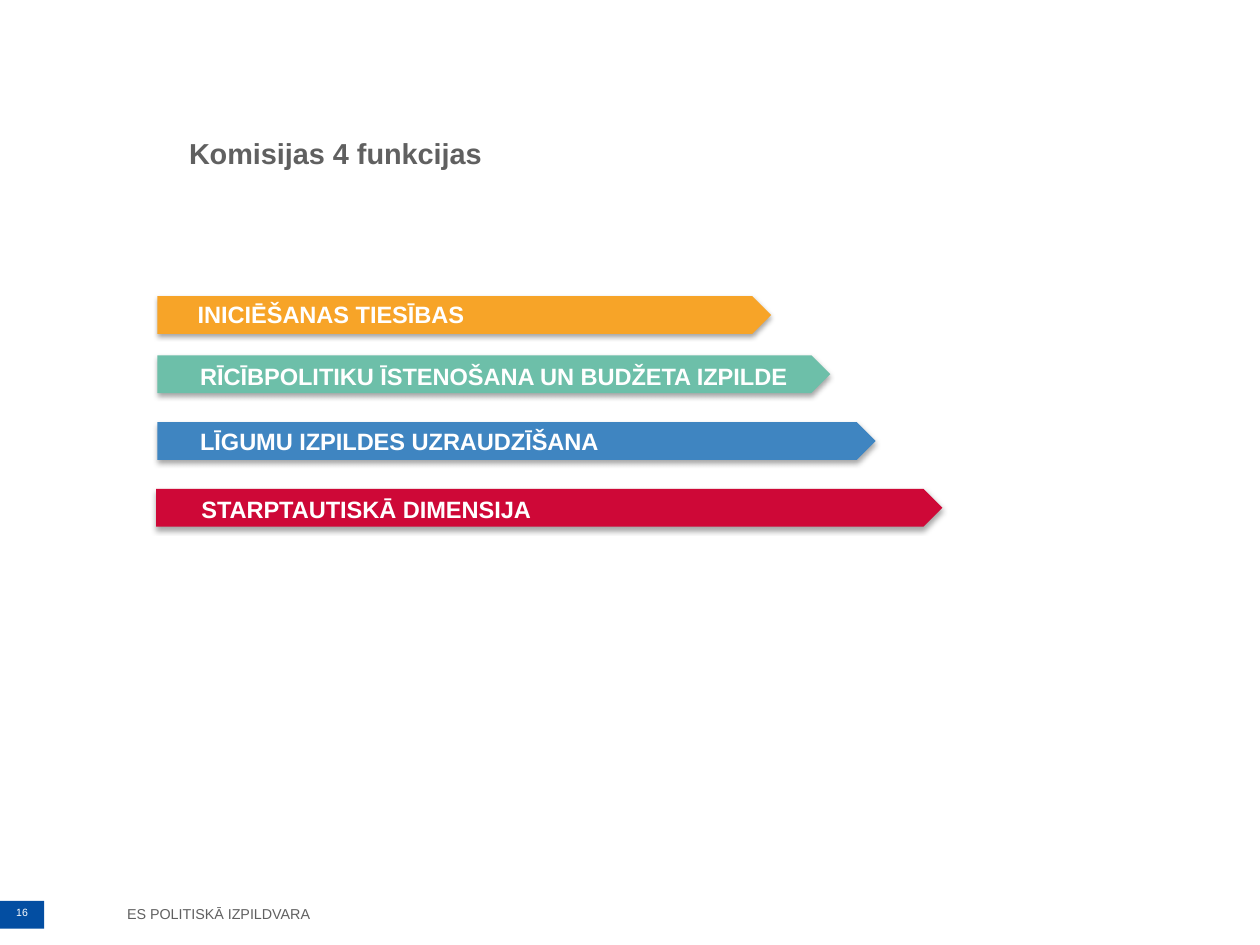
from lxml import etree
from pptx import Presentation
from pptx import util as u
from pptx.dml.color import RGBColor
from pptx.enum import shapes, text
from pptx.oxml import ns

COLORS = {
    "grey": "606060", "white": "FFFFFF", "navy": "034EA2", "black": "000000",
    "orange": "F7A428", "green": "6DBFA9", "blue": "3F85C1", "red": "CE0837",
}
ARROW_HEIGHT = 0.3
LABEL_HEIGHT = 0.33

# Arrow left, top, width; label left, top, width; colour; wording
FUNCTIONS = [
    ((1.25, 2.35, 4.87), (1.47, 2.33, 3.11), "orange", "INICIĒŠANAS TIESĪBAS"),
    ((1.25, 2.82, 5.34), (1.49, 2.82, 6.78), "green",
     "RĪCĪBPOLITIKU ĪSTENOŠANA UN BUDŽETA IZPILDE"),
    ((1.25, 3.35, 5.7), (1.49, 3.34, 6.13), "blue", "LĪGUMU IZPILDES UZRAUDZĪŠANA"),
    ((1.24, 3.88, 6.24), (1.5, 3.88, 3.17), "red", "STARPTAUTISKĀ DIMENSIJA"),
]


def inches(box):
    return [u.Inches(length) for length in box]


def write(shape, wording, size, color, bold=False, align=text.PP_ALIGN.LEFT, wrap=True):
    frame = shape.text_frame
    frame.text = wording
    frame.word_wrap = wrap
    frame.auto_size = text.MSO_AUTO_SIZE.NONE
    frame.vertical_anchor = text.MSO_ANCHOR.TOP
    paragraph = frame.paragraphs[0]
    paragraph.alignment = align
    font = paragraph.font
    font.name, font.size, font.bold = "Arial", u.Pt(size), bold
    font.color.rgb = RGBColor.from_string(COLORS[color])
    return paragraph


def add_filled(slide, kind, box, color):
    shape = slide.shapes.add_shape(kind, *inches(box))
    shape.shadow.inherit = False
    shape.fill.solid()
    shape.fill.fore_color.rgb = RGBColor.from_string(COLORS[color])
    shape.line.fill.background()
    return shape


def add_shadow(shape):
    effects = shape._element.spPr.find(ns.qn("a:effectLst"))
    shadow = etree.SubElement(
        effects, ns.qn("a:outerShdw"), blurRad=str(u.Pt(3.1)), dist=str(u.Pt(1.8)),
        dir="5400000", algn="t", rotWithShape="0")
    color = etree.SubElement(shadow, ns.qn("a:srgbClr"), val=COLORS["black"])
    etree.SubElement(color, ns.qn("a:alpha"), val="35000")


def set_title(slide, box, wording):
    title = slide.shapes.title
    title.left, title.top, title.width, title.height = inches(box)
    paragraph = write(title, wording, 16.5, "grey", bold=True)
    properties = paragraph._p.get_or_add_pPr()
    properties.set("marL", str(u.Inches(0.29)))
    properties.set("indent", str(-u.Inches(0.29)))


def add_function(slide, arrow_box, label_box, color, wording):
    arrow = add_filled(slide, shapes.MSO_SHAPE.PENTAGON, (*arrow_box, ARROW_HEIGHT), color)
    add_shadow(arrow)
    label = slide.shapes.add_textbox(*inches((*label_box, LABEL_HEIGHT)))
    write(label, wording, 13.5, "white", bold=True)


def add_footer(slide, box, wording):
    footer = slide.shapes.add_textbox(*inches(box))
    paragraph = write(footer, wording, 8.2, "grey", align=text.PP_ALIGN.CENTER, wrap=False)
    paragraph.line_spacing = 1.5


def add_page_number(slide, box, number):
    badge = add_filled(slide, shapes.MSO_SHAPE.RECTANGLE, box, "navy")
    write(badge, number, 6, "white", align=text.PP_ALIGN.CENTER)
    frame = badge.text_frame
    frame.margin_left = frame.margin_right = u.Inches(0.07)
    frame.margin_top = frame.margin_bottom = u.Inches(0.04)


def main():
    presentation = Presentation()
    presentation.slide_width, presentation.slide_height = u.Inches(10), u.Inches(7.5)
    slide = presentation.slides.add_slide(presentation.slide_layouts[5])

    # Footer band
    add_footer(slide, (0.89, 7.07, 1.69, 0.31), "ES POLITISKĀ IZPILDVARA")
    add_page_number(slide, (0, 7.15, 0.35, 0.22), "16")

    # Arrows, one for each function
    for function in FUNCTIONS:
        add_function(slide, *function)

    # Title
    set_title(slide, (1.4, 1.03, 6.75, 0.35), "Komisijas 4 funkcijas")

    presentation.save("out.pptx")


if __name__ == "__main__":
    main()
